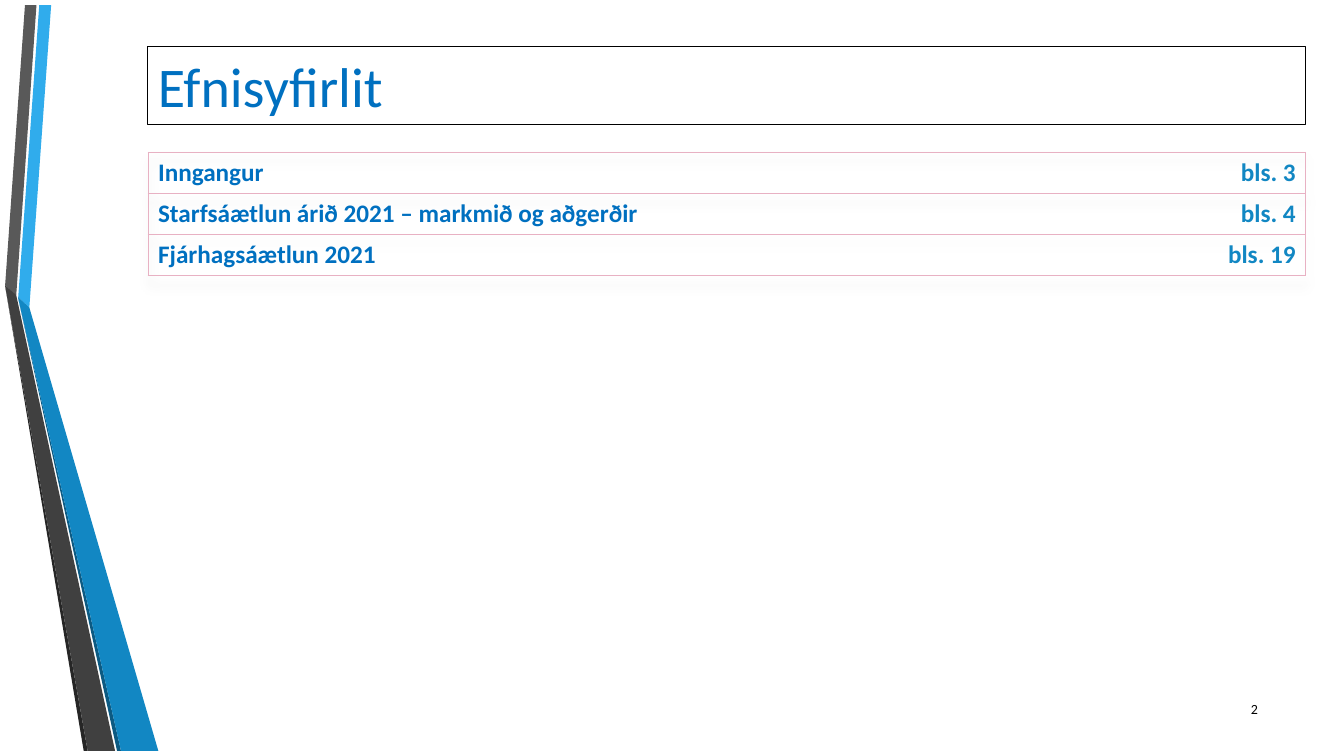
from lxml import etree
from pptx import Presentation
from pptx.dml.color import RGBColor
from pptx.enum.shapes import MSO_SHAPE
from pptx.enum.text import MSO_ANCHOR, PP_ALIGN
from pptx.oxml import parse_xml
from pptx.oxml.ns import nsdecls, qn
from pptx.util import Cm, Pt

RECTANGLE = MSO_SHAPE.RECTANGLE
TOP, MIDDLE = MSO_ANCHOR.TOP, MSO_ANCHOR.MIDDLE
LEFT, RIGHT = PP_ALIGN.LEFT, PP_ALIGN.RIGHT

BLACK = RGBColor(0x00, 0x00, 0x00)
TITLE_BLUE = RGBColor(0x00, 0x70, 0xC0)
BLUE = RGBColor(0x12, 0x87, 0xC3)
LIGHT_BLUE = RGBColor(0x30, 0xAC, 0xEC)
DARK_BLUE = RGBColor(0x0C, 0x5A, 0x82)
GREY = RGBColor(0x59, 0x59, 0x59)
DARK_GREY = RGBColor(0x40, 0x40, 0x40)
CHARCOAL = RGBColor(0x26, 0x26, 0x26)
PINK = RGBColor(0xE8, 0xB1, 0xC3)

NO_STYLE = "{2D5ABB26-0587-4C30-8999-92F81FD0307C}"
MARGIN_LEFT = 3.73
COLUMN_WIDTHS = (25.12, 4.06)
ROW_HEIGHT = 1.03

# Ribbon outlines in centimetres, from back to front
RIBBONS = [
    (LIGHT_BLUE, [(0.46, 7.49), (0.74, 7.75), (1.29, 0.13), (0.99, 0.13)]),
    (GREY, [(0.41, 7.44), (0.92, 0.13), (0.63, 0.13), (0.13, 7.19), (0.38, 7.44)]),
    (CHARCOAL, [(0.13, 7.21), (2.11, 18.92), (2.21, 18.92)]),
    (DARK_BLUE, [(3.05, 18.92), (0.46, 7.52), (2.95, 18.92)]),
    (BLUE, [(0.46, 7.49), (0.46, 7.52), (3.05, 18.92), (3.99, 18.92), (0.74, 7.75)]),
    (DARK_GREY, [(2.9, 18.92), (0.46, 7.67), (0.41, 7.44), (0.13, 7.19),
                 (0.13, 7.21), (2.21, 18.92)]),
]
CONTENTS = [
    ("Inngangur", "bls. 3"),
    ("Starfsáætlun árið 2021 – markmið og aðgerðir", "bls. 4"),
    ("Fjárhagsáætlun 2021", "bls. 19"),
]


def write_text(frame, text, size=18, color=BLACK, bold=False, align=LEFT):
    paragraph = frame.paragraphs[0]
    paragraph.alignment = align
    run = paragraph.add_run()
    run.text = text
    run.font.name = "Calibri"
    run.font.size = Pt(size)
    run.font.bold = bold
    run.font.color.rgb = color


def set_borders(cell, sides):
    """Draw pink lines on the given sides, a string of L, R, T and B."""
    properties = cell._tc.get_or_add_tcPr()
    for index, side in enumerate("LRTB"):
        if side in sides:
            fill = f'<a:solidFill><a:srgbClr val="{PINK}"/></a:solidFill>'
        else:
            fill = "<a:noFill/>"
        line = f'<a:ln{side} {nsdecls("a")} w="{Pt(0.75)}">{fill}</a:ln{side}>'
        properties.insert(index, parse_xml(line))


def add_table_shadow(properties):
    effects = etree.Element(qn("a:effectLst"))
    shadow = etree.SubElement(effects, qn("a:outerShdw"), blurRad=str(Pt(8)),
                              dist=str(Pt(6)), dir="5400000", rotWithShape="0")
    color = etree.SubElement(shadow, qn("a:srgbClr"), val="000000")
    etree.SubElement(color, qn("a:alpha"), val="15000")
    properties.insert(0, effects)


class ContentsSlide:
    def __init__(self, presentation):
        self.shapes = presentation.slides.add_slide(presentation.slide_layouts[6]).shapes

    def ribbon(self, color, points):
        start, *rest = [(Cm(x), Cm(y)) for x, y in points]
        builder = self.shapes.build_freeform(*start)
        builder.add_line_segments(rest)
        shape = builder.convert_to_shape()
        shape.shadow.inherit = False
        shape.fill.solid()
        shape.fill.fore_color.rgb = color
        shape.line.fill.background()

    def title(self, text, left, top, width, height):
        shape = self.shapes.add_shape(RECTANGLE, Cm(left), Cm(top), Cm(width), Cm(height))
        shape.shadow.inherit = False
        shape.fill.background()
        shape.line.color.rgb = BLACK
        shape.line.width = Pt(0.75)
        shape.text_frame.vertical_anchor = TOP
        write_text(shape.text_frame, text, size=40, color=TITLE_BLUE)

    def page_number(self, text, left, top, width, height):
        box = self.shapes.add_textbox(Cm(left), Cm(top), Cm(width), Cm(height))
        box.text_frame.word_wrap = True
        box.text_frame.vertical_anchor = MIDDLE
        write_text(box.text_frame, text, size=10, align=RIGHT)

    def contents_table(self, entries, left, top):
        frame = self.shapes.add_table(len(entries), len(COLUMN_WIDTHS), Cm(left), Cm(top),
                                      Cm(sum(COLUMN_WIDTHS)), Cm(ROW_HEIGHT * len(entries)))
        table = frame.table
        table.first_row = table.horz_banding = False
        properties = table._tbl.tblPr
        properties.find(qn("a:tableStyleId")).text = NO_STYLE
        add_table_shadow(properties)
        for column, width in zip(table.columns, COLUMN_WIDTHS):
            column.width = Cm(width)
        for row, entry in zip(table.rows, entries):
            row.height = Cm(ROW_HEIGHT)
            formats = [(TITLE_BLUE, LEFT, "LTB"), (BLUE, RIGHT, "RTB")]
            for cell, text, (color, align, sides) in zip(row.cells, entry, formats):
                cell.fill.background()
                set_borders(cell, sides)
                write_text(cell.text_frame, text, color=color, bold=True, align=align)


def main():
    presentation = Presentation()
    presentation.slide_width = Cm(33.87)
    presentation.slide_height = Cm(19.05)
    slide = ContentsSlide(presentation)
    for color, points in RIBBONS:
        slide.ribbon(color, points)
    slide.title("Efnisyfirlit", MARGIN_LEFT, 1.17, sum(COLUMN_WIDTHS), 1.97)
    slide.page_number("2", 30.43, 17.35, 1.52, 1.02)
    slide.contents_table(CONTENTS, MARGIN_LEFT, 3.84)
    presentation.save("out.pptx")


if __name__ == "__main__":
    main()
